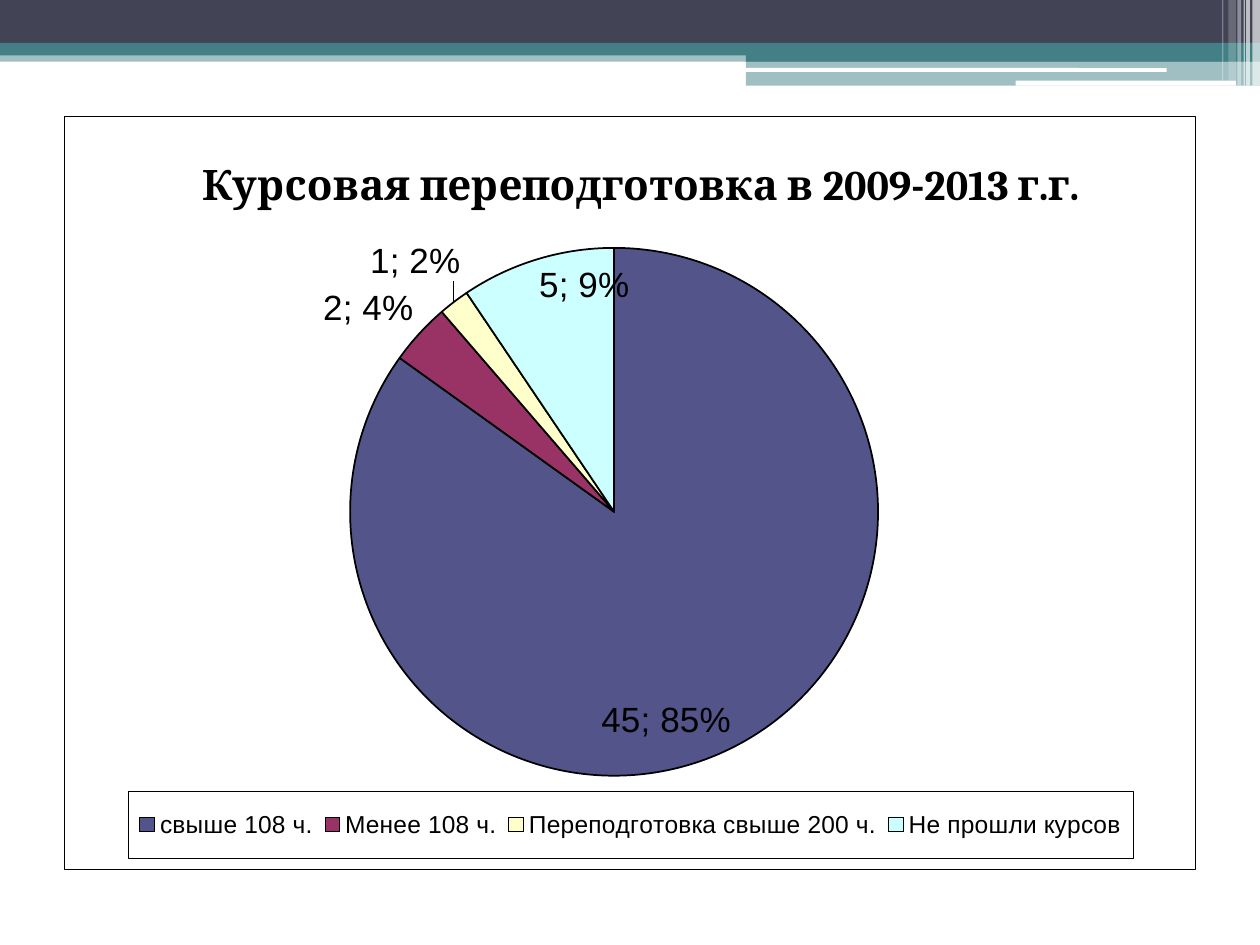
import copy

import pptx
import pptx.chart.data
import pptx.dml.color
import pptx.enum.chart
import pptx.enum.shapes
import pptx.oxml
import pptx.oxml.ns
import pptx.util
from pptx.util import Inches

SHAPES = pptx.enum.shapes.MSO_SHAPE
NAMESPACES = pptx.oxml.ns.nsdecls("c", "a")
SLICES = [
    # category, value, colour, label position, label shift
    ("свыше 108 ч.", 45, "53548A", "inEnd", None),
    ("Менее 108 ч.", 2, "993366", "outEnd", None),
    ("Переподготовка свыше 200 ч.", 1, "FFFFCC", "outEnd", (0.01, -0.02)),
    ("Не прошли курсов", 5, "CCFFFF", "inEnd", None),
]


def color(hex_string):
    return pptx.dml.color.RGBColor.from_string(hex_string)


def set_font(font, size, name="Arial", bold=False):
    font.size = pptx.util.Pt(size)
    font.name = name
    font.bold = bold
    font.color.rgb = color("000000")


def set_line(line, width):
    line.color.rgb = color("000000")
    line.width = pptx.util.Pt(width)


def add_bar(slide, box, fill, opacity=100, kind=SHAPES.RECTANGLE):
    bar = slide.shapes.add_shape(kind, *map(Inches, box))
    bar.shadow.inherit = False
    bar.fill.solid()
    bar.fill.fore_color.rgb = color(fill)
    bar.line.fill.background()
    if opacity < 100:
        solid_color = bar.fill._xPr.find(".//" + pptx.oxml.ns.qn("a:srgbClr"))
        solid_color.append(pptx.oxml.parse_xml(
            f'<a:alpha {NAMESPACES} val="{opacity * 1000}"/>'))


def add_header(slide, left, top, width):
    """Layered bands across the top, with pale stripes at the right end."""
    right = left + width
    split = left + 5.92
    add_bar(slide, (left, top + 0.4, width, 0.09), "438086", 50)
    add_bar(slide, (left, top, width, 0.34), "424456")
    add_bar(slide, (left, top + 0.34, width, 0.1), "438086")
    add_bar(slide, (split, top + 0.39, right - split, 0.1), "438086")
    add_bar(slide, (split, top + 0.48, right - split, 0.2), "438086", 50)
    for box in ((5.91, 0.54, 3.35, 0.03), (8.06, 0.64, 1.75, 0.04)):
        add_bar(slide, (left + box[0], top + box[1], *box[2:]), "FFFFFF",
                kind=SHAPES.ROUNDED_RECTANGLE)
    for inset, stripe_width, height, opacity in (
        (0.06, 0.06, 0.68, 65), (0.11, 0.03, 0.68, 65), (0.13, 0.01, 0.68, 60),
        (0.18, 0.03, 0.68, 40), (0.25, 0.06, 0.64, 20), (0.3, 0.01, 0.64, 30),
    ):
        add_bar(slide, (right - inset, top, stripe_width, height), "FFFFFF", opacity)


def layout_xml(x, y, width=None, height=None, inner=False, mode="edge"):
    """Manual chart layout in fractions of the chart frame."""
    parts = ['<c:layoutTarget val="inner"/>'] if inner else []
    if mode == "edge":
        parts += ['<c:xMode val="edge"/>', '<c:yMode val="edge"/>']
    parts += [f'<c:x val="{x}"/>', f'<c:y val="{y}"/>']
    if width:
        parts += [f'<c:w val="{width}"/>', f'<c:h val="{height}"/>']
    return (f'<c:layout {NAMESPACES}><c:manualLayout>{"".join(parts)}'
            '</c:manualLayout></c:layout>')


def set_layout(element, layout, before):
    """Replace the layout of a chart part, keeping it ahead of the given tags."""
    for old in element.findall(pptx.oxml.ns.qn("c:layout")):
        element.remove(old)
    tags = [pptx.oxml.ns.qn(tag) for tag in before]
    new = pptx.oxml.parse_xml(layout)
    following = next((child for child in element if child.tag in tags), None)
    if following is None:
        element.append(new)
    else:
        following.addprevious(new)


def add_labels(series):
    labels = series.data_labels
    labels.show_value = True
    labels.show_percentage = True
    labels.number_format = "0%"
    labels.number_format_is_linked = False
    set_font(labels.font, 20)
    group = labels._element
    shared = [group.find(pptx.oxml.ns.qn(tag)) for tag in ("c:numFmt", "c:txPr")]
    for index, (_, _, _, position, shift) in enumerate(SLICES):
        layout = layout_xml(*shift, mode="factor") if shift else ""
        label = pptx.oxml.parse_xml(
            f'<c:dLbl {NAMESPACES}><c:idx val="{index}"/>{layout}'
            f'<c:dLblPos val="{position}"/><c:showLegendKey val="0"/>'
            '<c:showVal val="1"/><c:showCatName val="0"/><c:showSerName val="0"/>'
            '<c:showPercent val="1"/><c:showBubbleSize val="0"/>'
            '<c:separator>; </c:separator></c:dLbl>')
        anchor = label.find(pptx.oxml.ns.qn("c:dLblPos"))
        for part in shared:
            anchor.addprevious(copy.deepcopy(part))
        group.insert(index, label)


def add_frame(chart):
    """White background and hairline border around the whole chart."""
    text_properties = chart._chartSpace.find(pptx.oxml.ns.qn("c:txPr"))
    text_properties.addprevious(pptx.oxml.parse_xml(
        f'<c:spPr {NAMESPACES}><a:solidFill><a:srgbClr val="FFFFFF"/></a:solidFill>'
        '<a:ln w="3175"><a:solidFill><a:srgbClr val="000000"/></a:solidFill></a:ln>'
        '</c:spPr>'))


def add_legend(chart):
    chart.has_legend = True
    legend = chart.legend
    legend.position = pptx.enum.chart.XL_LEGEND_POSITION.RIGHT
    legend.include_in_layout = False
    set_font(legend.font, 14)
    set_layout(legend._element, layout_xml(0.056, 0.897, 0.889, 0.088),
               ("c:overlay", "c:spPr", "c:txPr"))
    legend._element.find(pptx.oxml.ns.qn("c:txPr")).addprevious(
        pptx.oxml.parse_xml(
            f'<c:spPr {NAMESPACES}><a:ln w="3175"><a:solidFill>'
            '<a:srgbClr val="000000"/></a:solidFill></a:ln></c:spPr>'))


def add_training_chart(slide, left, top, width, height):
    data = pptx.chart.data.CategoryChartData()
    data.categories = [entry[0] for entry in SLICES]
    data.add_series("Series 1", [entry[1] for entry in SLICES])
    chart = slide.shapes.add_chart(
        pptx.enum.chart.XL_CHART_TYPE.PIE,
        *map(Inches, (left, top, width, height)), data).chart
    set_font(chart.font, 10)
    add_frame(chart)

    chart.has_title = True
    title = chart.chart_title
    paragraph = title.text_frame.paragraphs[0]
    paragraph.text = "Курсовая переподготовка в 2009-2013 г.г."
    set_font(paragraph.font, 24, "Cambria", bold=True)
    set_layout(title._element, layout_xml(0.115, 0.045),
               ("c:overlay", "c:spPr", "c:txPr"))

    plot = chart.plots[0]
    plot.vary_by_categories = True
    set_layout(plot._element.getparent(),
               layout_xml(0.11, 0.175, 0.752, 0.701, inner=True), ("c:pieChart",))
    series = plot.series[0]
    for index, entry in enumerate(SLICES):
        point_format = series.points[index].format
        point_format.fill.solid()
        point_format.fill.fore_color.rgb = color(entry[2])
        set_line(point_format.line, 1)
    add_labels(series)
    add_legend(chart)


def main():
    presentation = pptx.Presentation()
    presentation.slide_width = Inches(10)
    presentation.slide_height = Inches(7.5)
    slide = presentation.slides.add_slide(presentation.slide_layouts[6])
    add_header(slide, 0, 0, 10)
    add_training_chart(slide, 0.51, 0.92, 8.98, 5.98)
    presentation.save("out.pptx")


if __name__ == "__main__":
    main()
